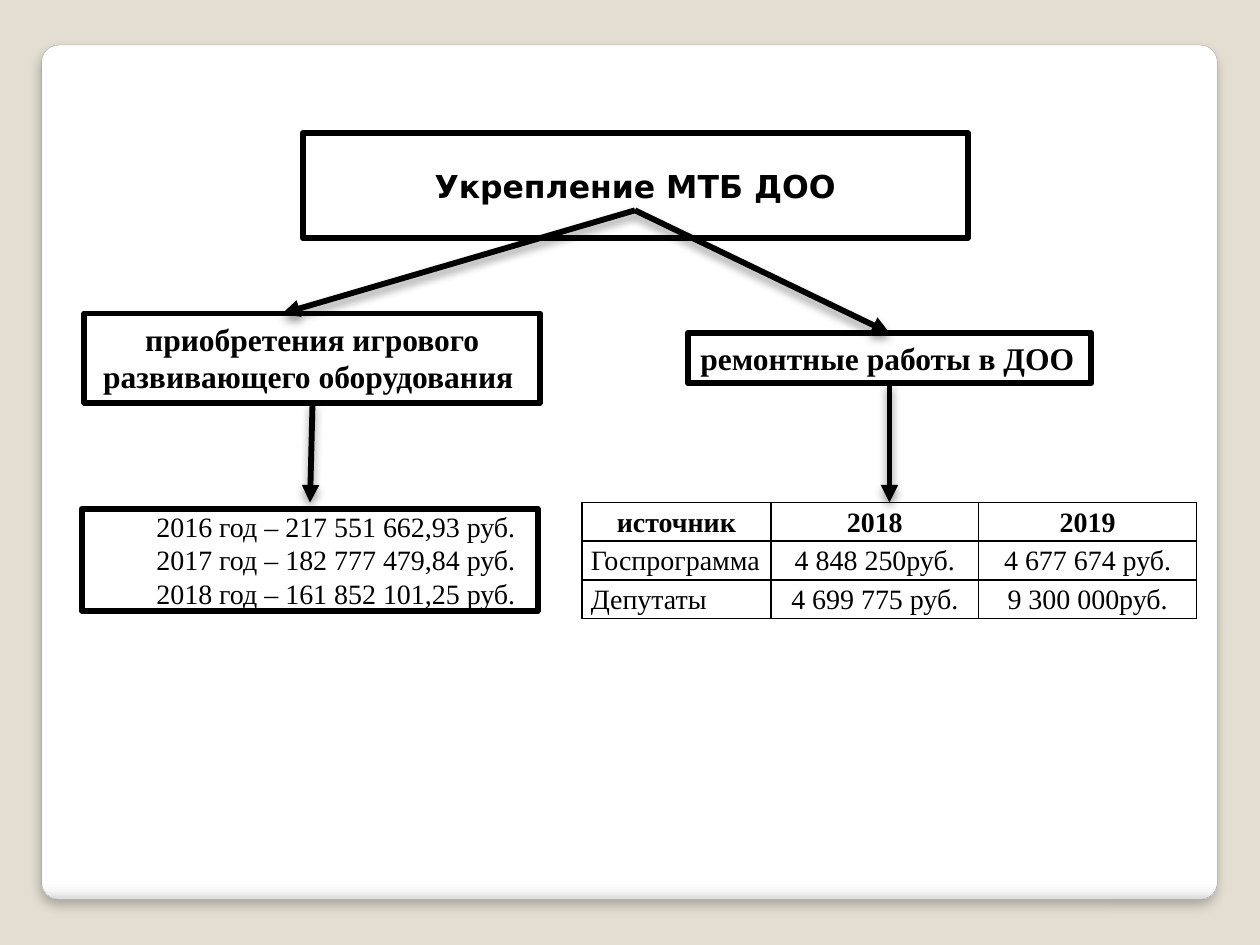
from dataclasses import dataclass

from lxml.etree import SubElement
from pptx import Presentation
from pptx.dml.color import RGBColor as RGB
from pptx.enum.shapes import MSO_CONNECTOR as CONN, MSO_SHAPE as SHAPE
from pptx.enum.text import MSO_ANCHOR as ANCHOR, MSO_AUTO_SIZE as FIT, PP_ALIGN as AL
from pptx.oxml.ns import qn
from pptx.util import Cm, Pt


@dataclass(frozen=True)
class Theme:
    back: str = "E3DED1"
    white: str = "FFFFFF"
    ink: str = "000000"
    edge: str = "A4A4A4"
    panel_stops: tuple = ((0, "FFFFFF"), (98, "FFFFFF"), (99, "F7F7F7"), (100, "DADADA"))
    title_font: str = "DejaVu Sans"
    body_font: str = "Times New Roman"
    head_size: float = 18
    text_size: float = 16
    frame: float = 3.35
    grid: float = 1


T = Theme()


def set_text(tf, text, font, size, bold, align):
    tf.text = text
    for p in tf.paragraphs:
        p.alignment = align
        p.space_before = Pt(0)
        for r in p.runs:
            r.font.name, r.font.size, r.font.bold = font, Pt(size), bold
            r.font.color.rgb = RGB.from_string(T.ink)


def add_shadow(sp, alpha, blur, dist):
    effects = SubElement(sp._element.spPr, qn("a:effectLst"))
    shadow = SubElement(effects, qn("a:outerShdw"), blurRad=str(Pt(blur)),
                        dist=str(Pt(dist)), dir="5400000", rotWithShape="0")
    color = SubElement(shadow, qn("a:srgbClr"), val=T.ink)
    SubElement(color, qn("a:alpha"), val=str(alpha * 1000))


prs = Presentation()
prs.slide_width, prs.slide_height = Cm(25.4), Cm(19.05)
s = prs.slides.add_slide(prs.slide_layouts[1])
s.background.fill.solid()
s.background.fill.fore_color.rgb = RGB.from_string(T.back)

panel = s.shapes.add_shape(SHAPE.ROUNDED_RECTANGLE, Cm(0.84), Cm(0.91), Cm(23.7), Cm(17.22))
panel.adjustments[0] = 0.02
panel.fill.gradient()
panel.fill.gradient_angle = 270
stops = panel._element.spPr.find(qn("a:gradFill")).find(qn("a:gsLst"))
stops.clear()
for pos, color in T.panel_stops:
    stop = SubElement(stops, qn("a:gs"), pos=str(pos * 1000))
    SubElement(stop, qn("a:srgbClr"), val=color)
panel.line.color.rgb = RGB.from_string(T.edge)
panel.line.width = Pt(0.16)
add_shadow(panel, 25, 6, 4)
s.shapes._spTree.insert(2, panel._element)

title, years = s.placeholders
equipment = s.shapes.add_textbox(0, 0, 0, 0)
repairs = s.shapes.add_textbox(0, 0, 0, 0)

year_sums = """2016 год – 217 551 662,93 руб.
2017 год – 182 777 479,84 руб.
2018 год – 161 852 101,25 руб."""

boxes = [
    (title, (6.1, 3.23, 13.41, 1.02), "Укрепление МТБ ДОО",
     T.title_font, T.head_size, True, AL.CENTER, True),
    (equipment, (1.7, 6.32, 9.19, 1.8), "приобретения игрового развивающего оборудования ",
     T.body_font, T.head_size, True, AL.CENTER, True),
    (repairs, (13.87, 6.71, 8.13, 1.02), "ремонтные работы в ДОО",
     T.body_font, T.head_size, True, AL.LEFT, False),
    (years, (1.65, 10.13, 9.19, 2.31), year_sums,
     T.body_font, T.text_size, False, AL.LEFT, True),
]
for sp, place, text, font, size, bold, align, wrap in boxes:
    sp.left, sp.top, sp.width, sp.height = map(Cm, place)
    sp.fill.solid()
    sp.fill.fore_color.rgb = RGB.from_string(T.white)
    sp.line.color.rgb = RGB.from_string(T.ink)
    sp.line.width = Pt(T.frame)
    tf = sp.text_frame
    tf.word_wrap = wrap
    tf.auto_size = FIT.SHAPE_TO_FIT_TEXT
    set_text(tf, text, font, size, bold, align)

years.text_frame.vertical_anchor = ANCHOR.MIDDLE
for p in years.text_frame.paragraphs:
    pPr = p._p.get_or_add_pPr()
    pPr.set("marL", "0")
    pPr.set("indent", str(Cm(1.25)))
    SubElement(pPr, qn("a:buNone"))

rows = [
    ("источник", "2018", "2019"),
    ("Госпрограмма", "4 848 250руб.", "4 677 674 руб."),
    ("Депутаты ", "4 699 775 руб.", "9 300 000руб."),
]
widths = (3.81, 4.19, 4.39)
row_height = 0.78
table = s.shapes.add_table(len(rows), len(widths), Cm(11.73), Cm(10.13),
                           Cm(sum(widths)), Cm(row_height * len(rows))).table
table.first_row = table.horz_banding = False
for column, width in zip(table.columns, widths):
    column.width = Cm(width)
for i, row in enumerate(rows):
    table.rows[i].height = Cm(row_height)
    for j, text in enumerate(row):
        cell = table.cell(i, j)
        cell.margin_left = cell.margin_right = Cm(0.18)
        cell.margin_top = cell.margin_bottom = 0
        align = AL.JUSTIFY if i and not j else AL.CENTER
        set_text(cell.text_frame, text, T.body_font, T.text_size, i == 0, align)
        cell.text_frame.paragraphs[0].line_spacing = 1.15
        tcPr = cell._tc.get_or_add_tcPr()
        for side in ("lnL", "lnR", "lnT", "lnB"):
            border = SubElement(tcPr, qn(f"a:{side}"), w=str(Pt(T.grid)))
            SubElement(SubElement(border, qn("a:solidFill")), qn("a:srgbClr"), val=T.ink)
        cell.fill.background()

arrows = [
    (12.8, 4.24, 5.69, 6.32),
    (12.8, 4.24, 17.93, 6.71),
    (6.3, 8.13, 6.25, 10.13),
    (17.93, 7.72, 17.93, 10.13),
]
for ends in arrows:
    arrow = s.shapes.add_connector(CONN.STRAIGHT, *map(Cm, ends))
    arrow.line.color.rgb = RGB.from_string(T.ink)
    arrow.line.width = Pt(T.frame)
    SubElement(arrow.line._get_or_add_ln(), qn("a:tailEnd"), type="triangle")
    add_shadow(arrow, 40, 5.2, 3)

prs.save("out.pptx")
